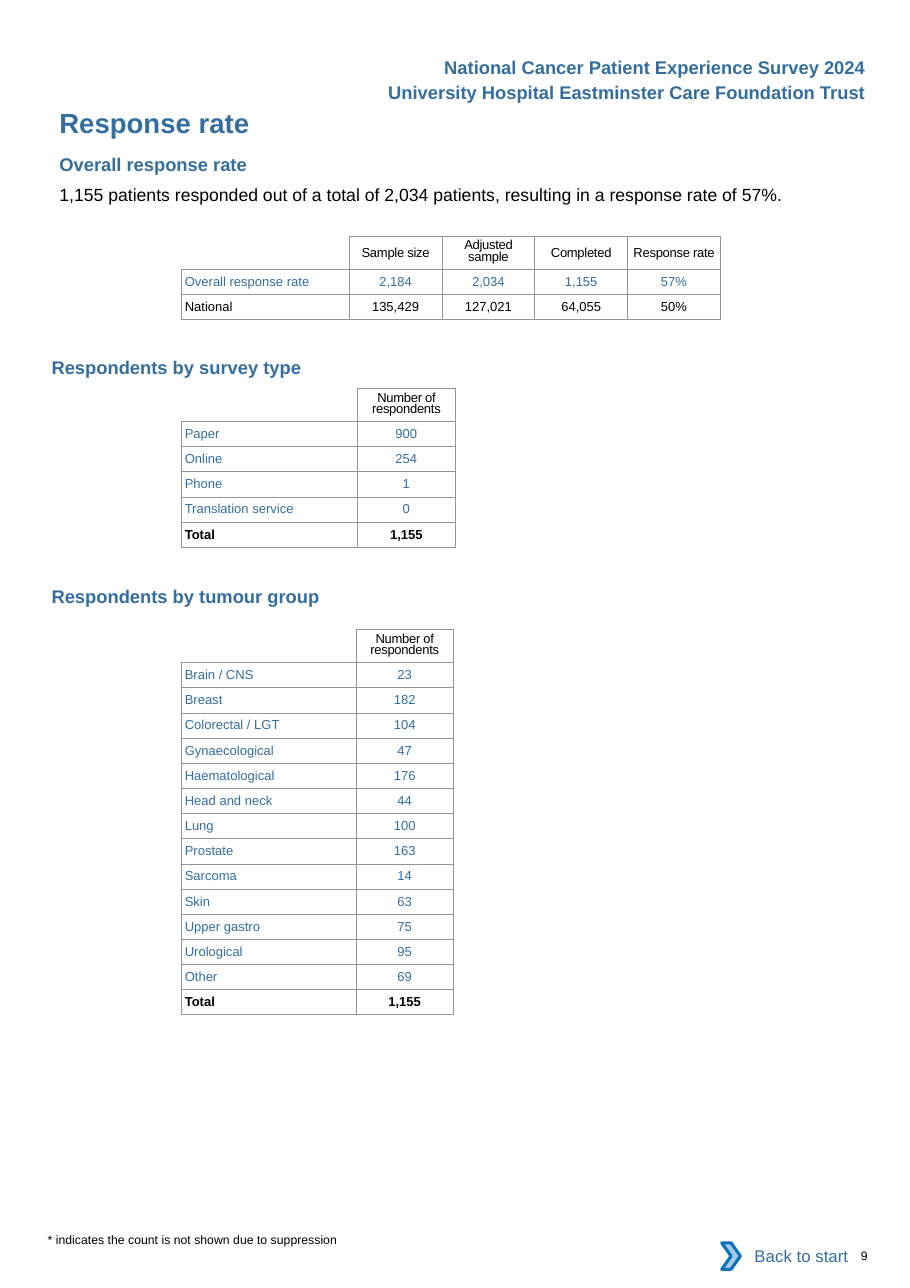
import dataclasses

import lxml.etree
import pptx
import pptx.dml.color
import pptx.enum.shapes
import pptx.enum.text
import pptx.oxml.ns
import pptx.util

Cm = pptx.util.Cm
Pt = pptx.util.Pt
Align = pptx.enum.text.PP_ALIGN
Anchor = pptx.enum.text.MSO_ANCHOR
Shape = pptx.enum.shapes.MSO_SHAPE


@dataclasses.dataclass(frozen=True)
class Theme:
    font: str = "Arial"
    blue: str = "336E9F"
    black: str = "000000"
    white: str = "FFFFFF"
    grid: str = "939598"
    light: str = "A8C7E9"
    edge: str = "0A74BB"
    title: float = 18
    head: float = 12
    body: float = 11.5
    link: float = 11
    cell: float = 8.5
    note: float = 8


def rgb(code):
    return pptx.dml.color.RGBColor.from_string(code)


def write(frame, text, size, color, font, bold=False, align=Align.LEFT,
          lead=None, track=0):
    """Fill a text frame; lead is the line height and track the letter gap, in points."""
    frame.word_wrap = True
    para = frame.paragraphs[0]
    para.alignment = align
    if lead:
        para.line_spacing = Pt(lead)
    run = para.add_run()
    run.text = text
    run.font.name = font
    run.font.size = Pt(size)
    run.font.bold = bold
    run.font.color.rgb = rgb(color)
    if track:
        run.font._element.set("spc", str(round(track * 100)))


class Page:
    LEAD = 7.6
    PAD = 0.08
    ROW = 0.58

    def __init__(self, slide, theme):
        self.slide = slide
        self.theme = theme

    def text(self, text, left, top, width, height, size, color, **form):
        box = self.slide.shapes.add_textbox(Cm(left), Cm(top), Cm(width), Cm(height))
        frame = box.text_frame
        frame.margin_left = frame.margin_right = 0
        frame.margin_top = frame.margin_bottom = 0
        write(frame, text, size, color, self.theme.font, **form)

    def head(self, text, left, top, width, size=None, **form):
        self.text(text, left, top, width, 0.5, size or self.theme.head,
                  self.theme.blue, bold=True, **form)

    def border(self, cell, corner):
        """Draw all four cell edges, leaving top and left open in the corner."""
        props = cell._tc.get_or_add_tcPr()
        for side in "LRTB":
            line = lxml.etree.SubElement(
                props, pptx.oxml.ns.qn("a:ln" + side), w=str(Pt(0.5)))
            if corner and side in "LT":
                lxml.etree.SubElement(line, pptx.oxml.ns.qn("a:noFill"))
            else:
                fill = lxml.etree.SubElement(line, pptx.oxml.ns.qn("a:solidFill"))
                lxml.etree.SubElement(
                    fill, pptx.oxml.ns.qn("a:srgbClr"), val=self.theme.grid)
        cell.fill.background()

    def table(self, heads, rows, left, top, widths, first):
        """Place a grid whose top row has height first and an open corner."""
        theme = self.theme
        data = [("", *heads), *rows]
        total = first + self.ROW * len(rows)
        table = self.slide.shapes.add_table(
            len(data), len(widths), Cm(left), Cm(top),
            Cm(sum(widths)), Cm(total)).table
        table.first_row = table.horz_banding = False
        for col, width in zip(table.columns, widths):
            col.width = Cm(width)
        for r, values in enumerate(data):
            table.rows[r].height = Cm(self.ROW if r else first)
            bold = values[0] == "Total"
            plain = r == 0 or values[0] in ("Total", "National")
            for c, value in enumerate(values):
                cell = table.cell(r, c)
                cell.margin_left = cell.margin_right = Cm(self.PAD)
                cell.margin_top = cell.margin_bottom = 0
                cell.vertical_anchor = Anchor.MIDDLE
                self.border(cell, r == c == 0)
                if value:
                    long = r == 0 and len(value) > len("Response rate")
                    write(cell.text_frame, value, theme.cell,
                          theme.black if plain else theme.blue, theme.font,
                          bold=bold, align=Align.CENTER if c else Align.LEFT,
                          lead=self.LEAD if long else None,
                          track=0 if r else -0.2)

    def shape(self, group, kind, left, top, width, height, fill, line=None):
        shape = group.shapes.add_shape(kind, Cm(left), Cm(top), Cm(width), Cm(height))
        shape.shadow.inherit = False
        shape.fill.solid()
        shape.fill.fore_color.rgb = rgb(fill)
        if line:
            shape.line.color.rgb = rgb(line)
            shape.line.width = Pt(2)
        else:
            shape.line.fill.background()
        return shape

    def link(self, text):
        theme = self.theme
        group = self.slide.shapes.add_group_shape()
        label = self.shape(group, Shape.RECTANGLE, 16.81, 28.42, 3, 1.07, theme.white)
        label.text_frame.vertical_anchor = Anchor.MIDDLE
        write(label.text_frame, text, theme.link, theme.blue, theme.font,
              align=Align.RIGHT)
        self.shape(group, Shape.CHEVRON, 16.64, 28.65, 0.43, 0.61,
                   theme.light, theme.edge)


TRUST = ("National Cancer Patient Experience Survey 2024",
         "University Hospital Eastminster Care Foundation Trust")
RATES = [("Overall response rate", "2,184", "2,034", "1,155", "57%"),
         ("National", "135,429", "127,021", "64,055", "50%")]
TYPES = [("Paper", "900"), ("Online", "254"), ("Phone", "1"),
         ("Translation service", "0"), ("Total", "1,155")]
GROUPS = [("Brain / CNS", "23"), ("Breast", "182"), ("Colorectal / LGT", "104"),
          ("Gynaecological", "47"), ("Haematological", "176"),
          ("Head and neck", "44"), ("Lung", "100"), ("Prostate", "163"),
          ("Sarcoma", "14"), ("Skin", "63"), ("Upper gastro", "75"),
          ("Urological", "95"), ("Other", "69"), ("Total", "1,155")]


def main():
    deck = pptx.Presentation()
    deck.slide_width, deck.slide_height = Cm(20.98), Cm(29.69)
    theme = Theme()
    page = Page(deck.slides.add_slide(deck.slide_layouts[6]), theme)

    for i, line in enumerate(TRUST):
        page.head(line, 7.5, 1.3 + 0.57 * i, 12.46, align=Align.RIGHT)
    page.head("Response rate", 1.37, 2.44, 10.5, size=theme.title)
    page.head("Overall response rate", 1.37, 3.53, 10.5)
    page.text("1,155 patients responded out of a total of 2,034 patients, "
              "resulting in a response rate of 57%.",
              1.37, 4.24, 18.3, 0.48, theme.body, theme.black)
    page.table(("Sample size", "Adjusted sample", "Completed", "Response rate"),
               RATES, 4.18, 5.44, [3.87] + [2.14] * 4, 0.71)

    count = ("Number of respondents",)
    page.head("Respondents by survey type", 1.19, 8.2, 8)
    page.table(count, TYPES, 4.18, 8.95, [4.06, 2.26], 0.66)
    page.head("Respondents by tumour group", 1.19, 13.49, 8)
    page.table(count, GROUPS, 4.18, 14.51, [4.03, 2.24], 0.66)

    page.text("* indicates the count is not shown due to suppression",
              1.1, 28.4, 8, 0.33, theme.note, theme.black)
    page.link("Back to start")
    page.text("9", 19.85, 28.78, 0.8, 0.33, theme.note, theme.black)
    deck.save("out.pptx")


if __name__ == "__main__":
    main()
